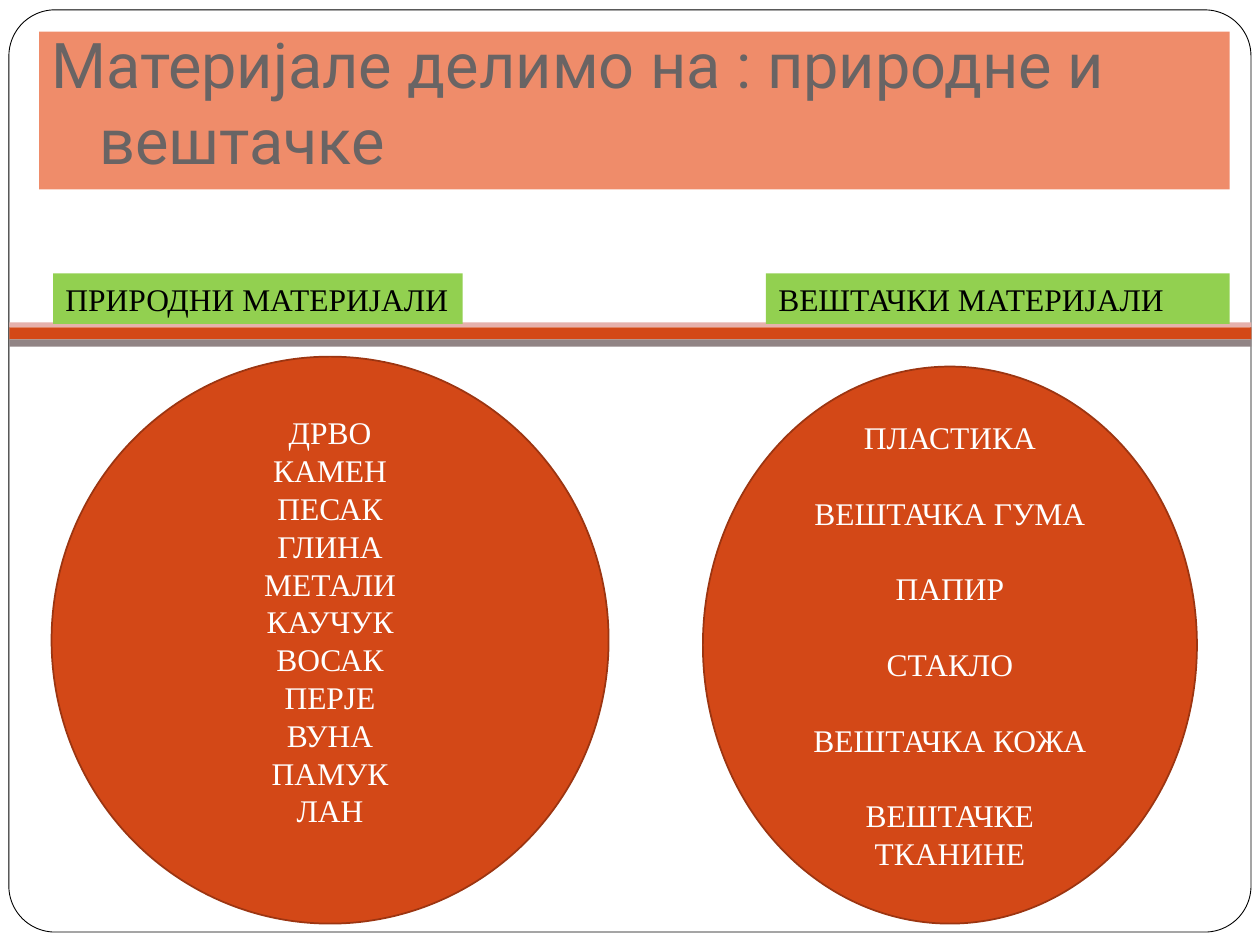
from pptx import Presentation
from pptx.dml.color import RGBColor
from pptx.enum import shapes, text
from pptx.util import Cm, Pt

WHITE = RGBColor(0xFF, 0xFF, 0xFF)
BLACK = RGBColor(0, 0, 0)
GREY = RGBColor(0x69, 0x64, 0x64)
SALMON = RGBColor(0xEF, 0x8C, 0x6A)
ORANGE = RGBColor(0xD3, 0x48, 0x17)
RUST = RGBColor(0x9C, 0x35, 0x11)
PINK = RGBColor(0xE6, 0xB1, 0xAC)
TAUPE = RGBColor(0x91, 0x84, 0x85)
GREEN = RGBColor(0x92, 0xD0, 0x50)

NATURAL = ["ДРВО", "КАМЕН", "ПЕСАК", "ГЛИНА", "МЕТАЛИ", "КАУЧУК",
           "ВОСАК", "ПЕРЈЕ", "ВУНА", "ПАМУК", "ЛАН"]
ARTIFICIAL = ["ПЛАСТИКА", "ВЕШТАЧКА ГУМА", "ПАПИР", "СТАКЛО",
              "ВЕШТАЧКА КОЖА", "ВЕШТАЧКЕ ТКАНИНЕ"]
LINE_PITCH = Pt(21.6)


def add_shape(s, kind, box, fill, line=None, weight=1):
    sp = s.shapes.add_shape(kind, *(Cm(v) for v in box))
    sp.shadow.inherit = False
    sp.fill.solid()
    sp.fill.fore_color.rgb = fill
    if line is None:
        sp.line.fill.background()
    else:
        sp.line.color.rgb = line
        sp.line.width = Pt(weight)
    return sp


def write(sp, lines, font="Times New Roman", size=18, color=BLACK,
          align=text.PP_ALIGN.LEFT, anchor=text.MSO_ANCHOR.TOP,
          margins=(0.25, 0.13, 0.25, 0.13), pitch=None, gap=0, hang=0):
    tf = sp.text_frame
    tf.word_wrap = True
    tf.vertical_anchor = anchor
    (tf.margin_left, tf.margin_top,
     tf.margin_right, tf.margin_bottom) = (Cm(m) for m in margins)
    for i, line in enumerate(lines):
        p = tf.add_paragraph() if i else tf.paragraphs[0]
        p.alignment = align
        if pitch:
            p.line_spacing = pitch
        if gap and i:
            p.space_before = gap
        if hang:
            pPr = p._p.get_or_add_pPr()
            pPr.set("marL", str(Cm(hang)))
            pPr.set("indent", str(-Cm(hang)))
        r = p.add_run()
        r.text = line
        r.font.name = font
        r.font.size = Pt(size)
        r.font.color.rgb = color


def add_frame(s, box):
    sp = add_shape(s, shapes.MSO_SHAPE.ROUNDED_RECTANGLE, box, WHITE, BLACK, 0.5)
    sp.adjustments[0] = 0.05


def add_divider(s, box):
    x, y, w, h = box
    for color, start, share in ((PINK, 0, 0.2), (ORANGE, 0.2, 0.5), (TAUPE, 0.7, 0.3)):
        add_shape(s, shapes.MSO_SHAPE.RECTANGLE,
                  (x, y + h * start, w, h * share), color)


def add_title(s, box):
    sp = add_shape(s, shapes.MSO_SHAPE.RECTANGLE, box, SALMON)
    write(sp, ["Материјале делимо на : природне и вештачке"], font="Roboto",
          size=36, color=GREY, anchor=text.MSO_ANCHOR.BOTTOM,
          margins=(0.25, 0.13, 0.25, 0.25), hang=0.96)


def add_heading(s, box, heading):
    sp = add_shape(s, shapes.MSO_SHAPE.RECTANGLE, box, GREEN)
    write(sp, [heading])


def add_circle(s, box, items, gap=0, bottom=0.13):
    sp = add_shape(s, shapes.MSO_SHAPE.OVAL, box, ORANGE, RUST)
    write(sp, items, color=WHITE, align=text.PP_ALIGN.CENTER,
          anchor=text.MSO_ANCHOR.MIDDLE, margins=(0.3, 0.13, 0.3, bottom),
          pitch=LINE_PITCH, gap=gap)


def main():
    prs = Presentation()
    prs.slide_width, prs.slide_height = Cm(25.4), Cm(19.05)
    s = prs.slides.add_slide(prs.slide_layouts[6])
    add_frame(s, (0.18, 0.2, 25.04, 18.59))
    add_divider(s, (0.19, 6.5, 25.04, 0.49))
    add_title(s, (0.79, 0.64, 24, 3.18))
    add_circle(s, (1.04, 7.19, 11.23, 11.43), NATURAL, bottom=0.89)
    add_circle(s, (14.17, 7.39, 9.96, 11.23), ARTIFICIAL, gap=LINE_PITCH)
    add_heading(s, (1.07, 5.51, 8.26, 1.02), "ПРИРОДНИ МАТЕРИЈАЛИ")
    add_heading(s, (15.44, 5.51, 9.35, 1.02), "ВЕШТАЧКИ МАТЕРИЈАЛИ")
    prs.save("out.pptx")


if __name__ == "__main__":
    main()
